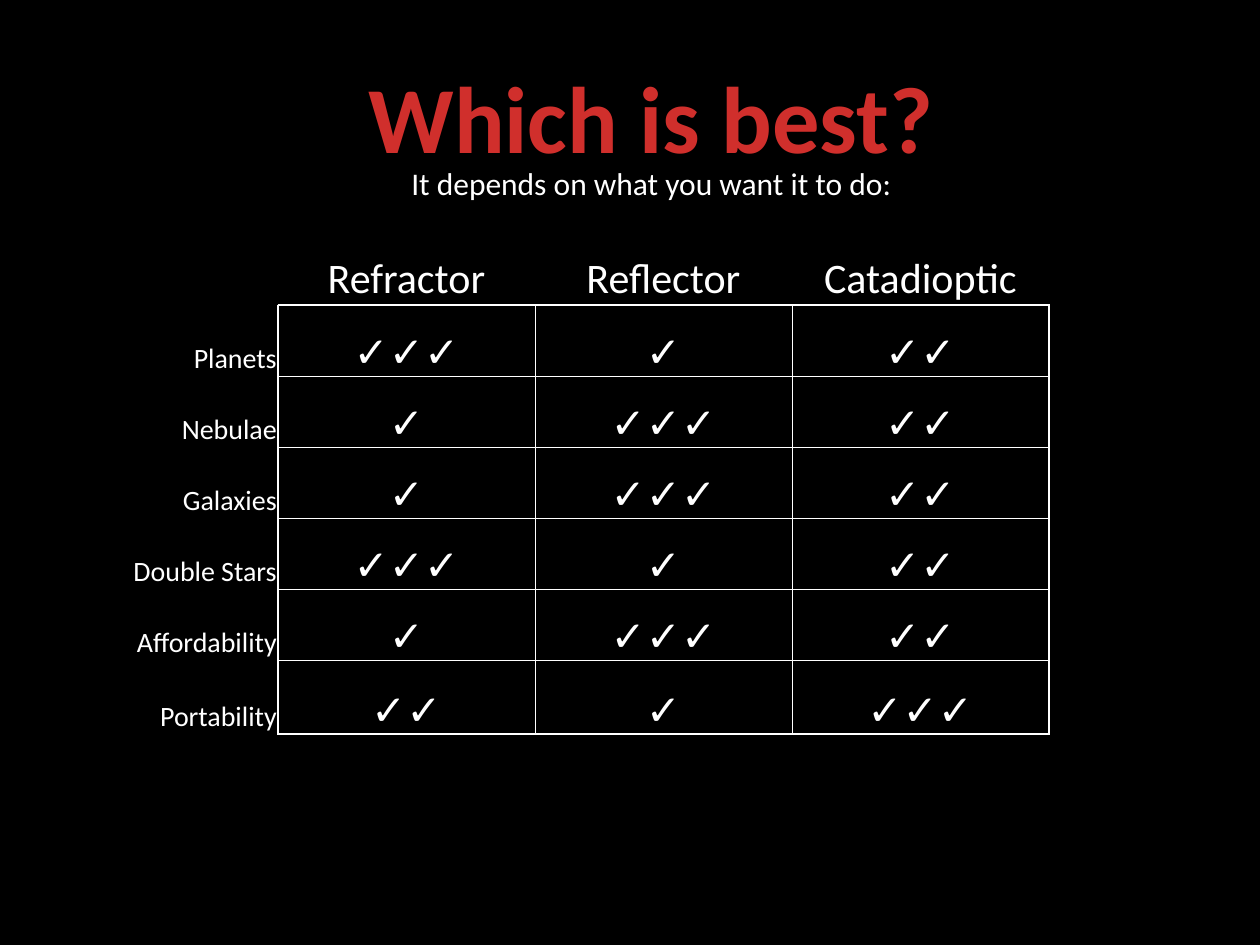
import lxml.etree
import pptx
import pptx.dml.color
import pptx.enum.text
import pptx.oxml.ns
import pptx.util

BLACK = pptx.dml.color.RGBColor(0x00, 0x00, 0x00)
WHITE = pptx.dml.color.RGBColor(0xFF, 0xFF, 0xFF)
RED = pptx.dml.color.RGBColor(0xD0, 0x2F, 0x2C)
ALIGN = pptx.enum.text.PP_ALIGN
ANCHOR = pptx.enum.text.MSO_ANCHOR

TELESCOPES = ["Refractor", "Reflector", "Catadioptic"]
RATINGS = {
    "Planets": [3, 1, 2],
    "Nebulae": [1, 3, 2],
    "Galaxies": [1, 3, 2],
    "Double Stars": [3, 1, 2],
    "Affordability": [1, 3, 2],
    "Portability": [2, 1, 3],
}
COLUMN_WIDTHS = [246, 257, 257, 257]
ROW_HEIGHTS = [74, 71, 71, 71, 71, 71, 74]

TITLE_FONT = {"name": "Calibri", "size": pptx.util.Pt(54), "bold": True}
SUBTITLE_FONT = {"name": "Calibri", "size": pptx.util.Pt(18), "bold": False}
HEADER_FONT = {"name": "Calibri", "size": pptx.util.Pt(24), "bold": False}
LABEL_FONT = {"name": "Calibri", "size": pptx.util.Pt(16), "bold": False}
CHECK_FONT = {"name": "Arial", "size": pptx.util.Pt(24), "bold": False}
CELL_FORMAT = {
    "vertical_anchor": ANCHOR.BOTTOM,
    "margin_left": pptx.util.Inches(0.01),
    "margin_right": pptx.util.Inches(0.01),
    "margin_top": pptx.util.Inches(0.01),
    "margin_bottom": 0,
}


def px(length):
    return pptx.util.Emu(round(length * 914400 / 126))


def set_attributes(target, values):
    for name, value in values.items():
        setattr(target, name, value)


def write_text(text_frame, text, font, color, alignment):
    paragraph = text_frame.paragraphs[0]
    paragraph.alignment = alignment
    run = paragraph.add_run()
    run.text = text
    set_attributes(run.font, font)
    run.font.color.rgb = color


def add_heading(slide, left, top):
    title = slide.shapes.title
    set_attributes(title, {"left": px(left), "top": px(top), "width": px(756), "height": px(127)})
    set_attributes(title.text_frame, {"vertical_anchor": ANCHOR.TOP, "word_wrap": True})
    write_text(title.text_frame, "Which is best?", TITLE_FONT, RED, ALIGN.CENTER)
    subtitle = slide.shapes.add_textbox(px(left + 126), px(top + 105), px(557), px(89))
    subtitle.text_frame.word_wrap = True
    write_text(subtitle.text_frame, "It depends on what you want it to do:", SUBTITLE_FONT, WHITE, ALIGN.LEFT)


def line_format(edge, last_edge, in_grid):
    if not in_grid or edge == 0:
        return BLACK, 0.5
    return WHITE, 1 if edge in (1, last_edge) else 0.5


def set_borders(cell, row, column):
    last_row, last_column = len(ROW_HEIGHTS), len(COLUMN_WIDTHS)
    borders = {
        "lnL": line_format(column, last_column, row > 0),
        "lnR": line_format(column + 1, last_column, row > 0),
        "lnT": line_format(row, last_row, column > 0),
        "lnB": line_format(row + 1, last_row, column > 0),
    }
    properties = cell._tc.get_or_add_tcPr()
    for index, (tag, (color, width)) in enumerate(borders.items()):
        line = lxml.etree.Element(pptx.oxml.ns.qn("a:" + tag), w=str(pptx.util.Pt(width)))
        fill = lxml.etree.SubElement(line, pptx.oxml.ns.qn("a:solidFill"))
        lxml.etree.SubElement(fill, pptx.oxml.ns.qn("a:srgbClr"), val=str(color))
        properties.insert(index, line)


def add_ratings(slide, left, top):
    rows = [["", *TELESCOPES]]
    rows += [[label, *("✓" * count for count in counts)] for label, counts in RATINGS.items()]
    table = slide.shapes.add_table(
        len(ROW_HEIGHTS), len(COLUMN_WIDTHS), px(left), px(top), px(sum(COLUMN_WIDTHS)), px(sum(ROW_HEIGHTS))
    ).table
    set_attributes(table, {"first_row": False, "horz_banding": False})
    for column, width in zip(table.columns, COLUMN_WIDTHS):
        column.width = px(width)
    for row, height in zip(table.rows, ROW_HEIGHTS):
        row.height = px(height)
    for row, texts in enumerate(rows):
        for column, text in enumerate(texts):
            cell = table.cell(row, column)
            set_attributes(cell, CELL_FORMAT)
            cell.fill.solid()
            cell.fill.fore_color.rgb = BLACK
            set_borders(cell, row, column)
            font = HEADER_FONT if row == 0 else LABEL_FONT if column == 0 else CHECK_FONT
            if text:
                write_text(cell.text_frame, text, font, WHITE, ALIGN.CENTER if column else ALIGN.RIGHT)


def main():
    presentation = pptx.Presentation()
    set_attributes(presentation, {"slide_width": px(1260), "slide_height": px(945)})
    slide = presentation.slides.add_slide(presentation.slide_layouts[5])
    slide.background.fill.solid()
    slide.background.fill.fore_color.rgb = BLACK
    add_heading(slide, 273, 53)
    add_ratings(slide, 32, 231)
    presentation.save("out.pptx")


if __name__ == "__main__":
    main()
